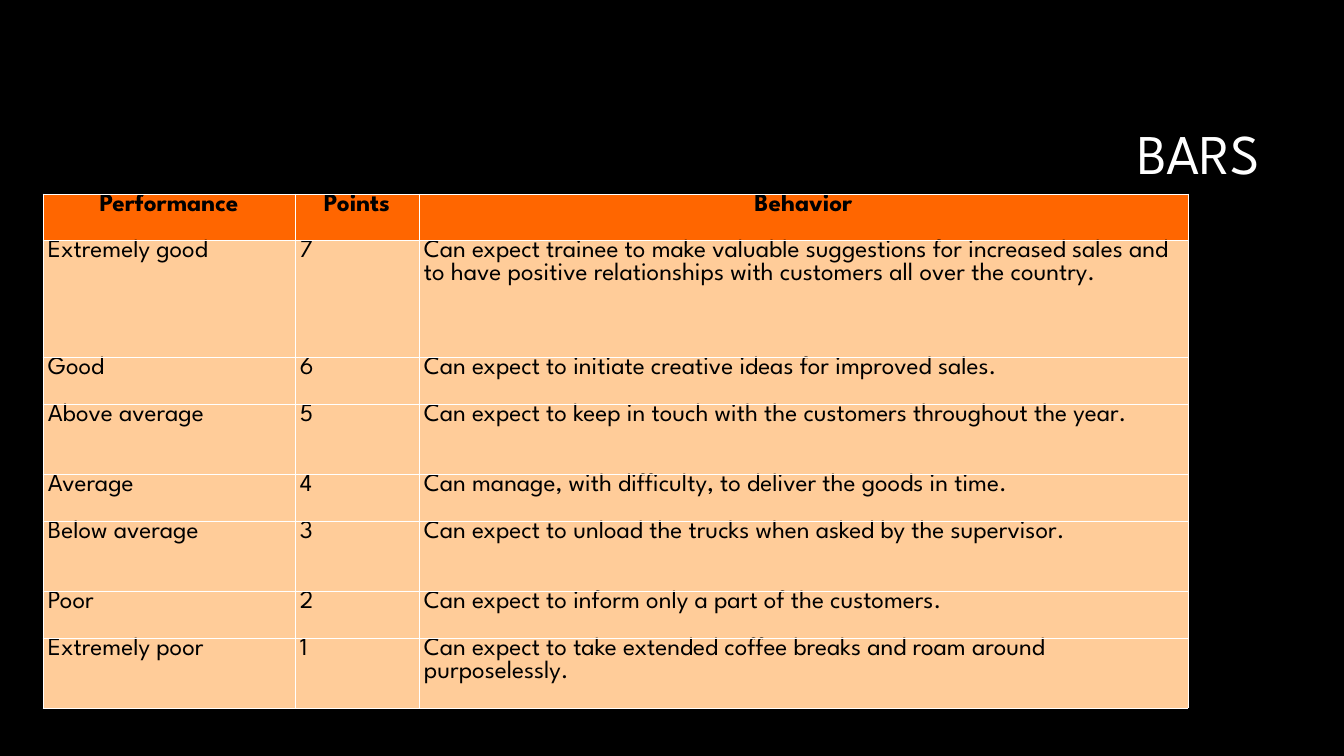
import dataclasses

import lxml.etree
import pptx
import pptx.dml.color
import pptx.enum.text
import pptx.oxml.ns
import pptx.util

ALIGN = pptx.enum.text.PP_ALIGN


@dataclasses.dataclass(frozen=True)
class Theme:
    font: str = "League Spartan"
    background: str = "000000"
    title: str = "FFFFFF"
    text: str = "000000"
    header_fill: str = "FF6600"
    body_fill: str = "FFCC99"
    border: str = "FFFFFF"
    title_size: int = 40
    table_size: int = 18
    border_width: float = 0.5


class Deck:
    """Draws styled elements on the current slide, with lengths in px."""

    EMU_PER_PX = 914400 / 100.8

    def __init__(self, theme, width, height):
        self.theme = theme
        self.prs = pptx.Presentation()
        self.prs.slide_width = self.px(width)
        self.prs.slide_height = self.px(height)
        self.slide = None

    def px(self, length):
        return pptx.util.Emu(round(length * self.EMU_PER_PX))

    def rgb(self, color):
        return pptx.dml.color.RGBColor.from_string(color)

    def add_slide(self):
        self.slide = self.prs.slides.add_slide(self.prs.slide_layouts[6])
        fill = self.slide.background.fill
        fill.solid()
        fill.fore_color.rgb = self.rgb(self.theme.background)

    def set_text(self, tf, text, size, color, align, bold=False):
        tf.text = text
        p = tf.paragraphs[0]
        p.alignment = align
        for r in p.runs:
            r.font.name = self.theme.font
            r.font.size = pptx.util.Pt(size)
            r.font.bold = bold
            r.font.color.rgb = self.rgb(color)
        return p

    def title(self, text, x, y, w, h):
        box = self.slide.shapes.add_textbox(*map(self.px, (x, y, w, h)))
        tf = box.text_frame
        tf.word_wrap = True
        tf.vertical_anchor = pptx.enum.text.MSO_ANCHOR.MIDDLE
        p = self.set_text(tf, text, self.theme.title_size, self.theme.title, ALIGN.RIGHT)
        p.line_spacing = 0.9

    def borders(self, cell):
        qn = pptx.oxml.ns.qn
        tcPr = cell._tc.get_or_add_tcPr()
        width = str(pptx.util.Pt(self.theme.border_width))
        for side in ("lnL", "lnR", "lnT", "lnB"):
            ln = lxml.etree.SubElement(tcPr, qn(f"a:{side}"), w=width)
            fill = lxml.etree.SubElement(ln, qn("a:solidFill"))
            lxml.etree.SubElement(fill, qn("a:srgbClr"), val=self.theme.border)

    def cell(self, cell, text, header):
        theme = self.theme
        cell.margin_left = cell.margin_right = self.px(5)
        cell.margin_top = cell.margin_bottom = 0
        self.borders(cell)
        cell.fill.solid()
        cell.fill.fore_color.rgb = self.rgb(theme.header_fill if header else theme.body_fill)
        align = ALIGN.CENTER if header else ALIGN.LEFT
        self.set_text(cell.text_frame, text, theme.table_size, theme.text, align, header)

    def table(self, rows, x, y, widths, heights):
        box = map(self.px, (x, y, sum(widths), sum(heights)))
        table = self.slide.shapes.add_table(len(heights), len(widths), *box).table
        for column, width in zip(table.columns, widths):
            column.width = self.px(width)
        for row, height in zip(table.rows, heights):
            row.height = self.px(height)
        for i, texts in enumerate(rows):
            for j, text in enumerate(texts):
                self.cell(table.cell(i, j), text, header=i == 0)


RATINGS = [
    ("Performance", "Points", "Behavior"),
    ("Extremely good", "7",
     "Can expect trainee to make valuable suggestions for increased sales "
     "and to have positive relationships with customers all over the country."),
    ("Good", "6", "Can expect to initiate creative ideas for improved sales."),
    ("Above average", "5",
     "Can expect to keep in touch with the customers throughout the year."),
    ("Average", "4", "Can manage, with difficulty, to deliver the goods in time."),
    ("Below average", "3", "Can expect to unload the trucks when asked by the supervisor."),
    ("Poor", "2", "Can expect to inform only a part of the customers."),
    ("Extremely poor", "1",
     "Can expect to take extended coffee breaks and roam around purposelessly."),
]


def main():
    deck = Deck(Theme(), 1344, 756)
    deck.add_slide()
    deck.title("BARS", 320, 85, 950, 142)
    deck.table(RATINGS, 43, 194, (252, 124, 769), (46, 117, 47, 70, 47, 70, 47, 70))
    deck.prs.save("out.pptx")


if __name__ == "__main__":
    main()
